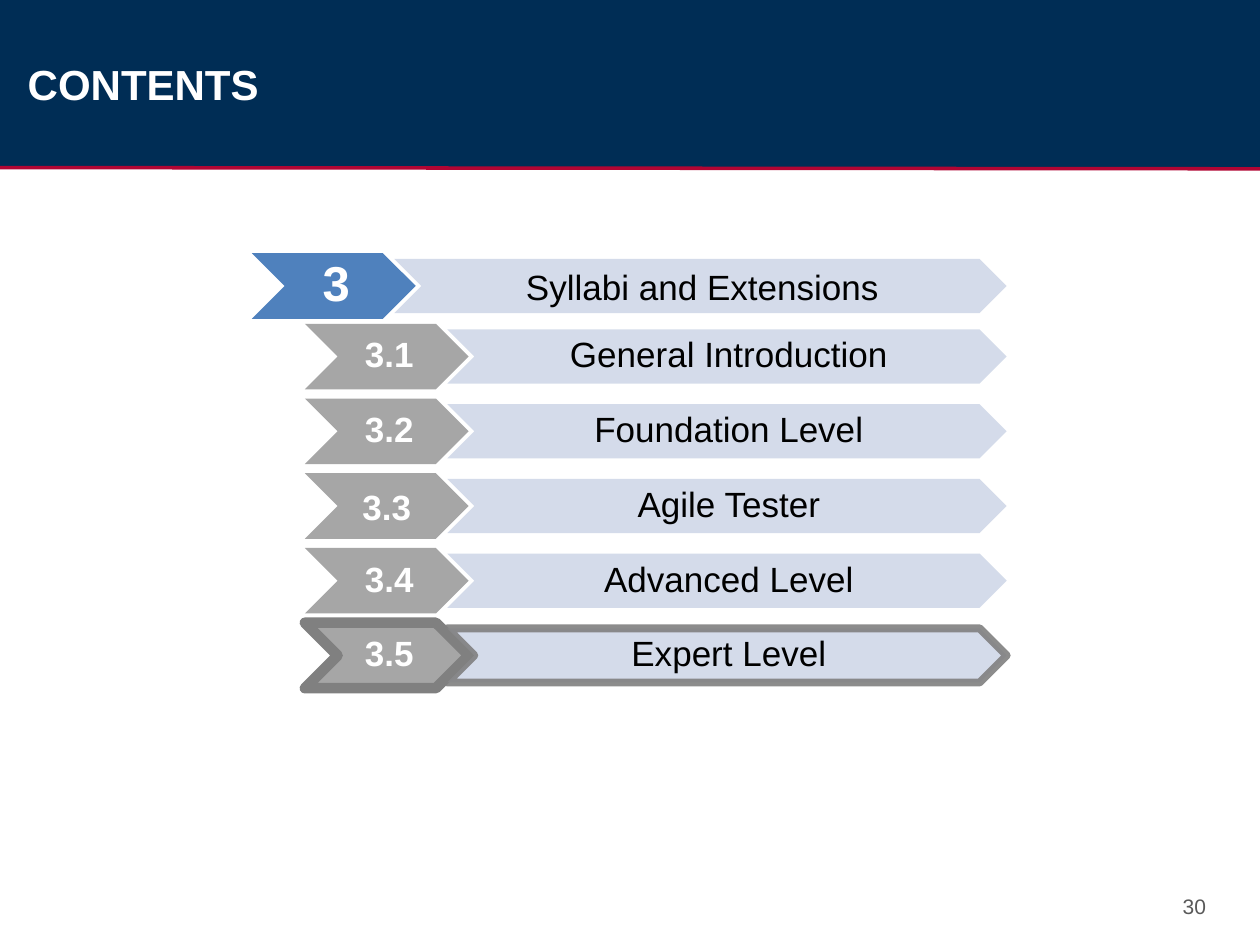
from lxml import etree
from pptx import Presentation
from pptx.dml.color import RGBColor
from pptx.enum.shapes import MSO_CONNECTOR, MSO_SHAPE
from pptx.enum.text import MSO_ANCHOR, MSO_AUTO_SIZE, PP_ALIGN
from pptx.oxml.ns import qn
from pptx.util import Inches, Pt

NAVY = RGBColor(0x00, 0x2D, 0x55)
RED = RGBColor(0xB1, 0x05, 0x33)
BLUE = RGBColor(0x4F, 0x81, 0xBD)
GREY = RGBColor(0xA6, 0xA6, 0xA6)
DARK_GREY = RGBColor(0x80, 0x80, 0x80)
TEXT_GREY = RGBColor(0x59, 0x59, 0x59)
PALE_BLUE = RGBColor(0xD0, 0xD8, 0xE8)
WHITE = RGBColor(0xFF, 0xFF, 0xFF)
BLACK = RGBColor(0x00, 0x00, 0x00)

COLUMNS, ROWS = 100, 75
CHEVRON_HEIGHT, BAR_HEIGHT = 5.2, 4.3
CHEVRON_WIDTH, BAR_OFFSET, BAR_RIGHT = 13, 11.3, 79.9
CHEVRON_INSETS = (0.04, 0.02, 0, 0.02)
BAR_INSETS = (0.03, 0.01, 0, 0.01)
DEFAULT_INSETS = (0.1, 0.05, 0.1, 0.05)
FIRST_TOPIC, TOPIC_STEP = 28.3, 5.93
TOPICS = ["General Introduction", "Foundation Level", "Agile Tester",
          "Advanced Level", "Expert Level"]


def set_all(target, values):
    for name, value in values.items():
        setattr(target, name, value)


def set_alpha(shape, percent):
    """Make the fill and outline partly transparent."""
    for color in shape.element.spPr.iter(qn("a:srgbClr")):
        etree.SubElement(color, qn("a:alpha"), val=str(percent * 1000))


class ContentsSlide:
    font_name = "Arial"

    def __init__(self, deck):
        self.column = deck.slide_width / COLUMNS
        self.row = deck.slide_height / ROWS
        self.slide = deck.slides.add_slide(deck.slide_layouts[5])
        self.shapes = self.slide.shapes

    def place(self, left, top, width, height):
        return [round(left * self.column), round(top * self.row),
                round(width * self.column), round(height * self.row)]

    def label(self, box, text, size, color, bold=False, align=PP_ALIGN.CENTER,
              insets=DEFAULT_INSETS, spacing=1.0, anchor=MSO_ANCHOR.MIDDLE):
        left, top, right, bottom = map(Inches, insets)
        frame = box.text_frame
        frame.text = text
        set_all(frame, dict(margin_left=left, margin_top=top, margin_right=right,
                            margin_bottom=bottom, word_wrap=True,
                            vertical_anchor=anchor, auto_size=MSO_AUTO_SIZE.NONE))
        para = frame.paragraphs[0]
        set_all(para, dict(alignment=align, line_spacing=spacing))
        span = para.runs[0]
        set_all(span.font, dict(name=self.font_name, size=Pt(size), bold=bold))
        span.font.color.rgb = color

    def shape(self, kind, area, color, alpha=None, outline=None):
        shape = self.shapes.add_shape(kind, *self.place(*area))
        shape.shadow.inherit = False
        shape.fill.solid()
        shape.fill.fore_color.rgb = color
        if outline:
            shape.line.width = Pt(outline)
            shape.line.color.rgb = DARK_GREY
        else:
            shape.line.fill.background()
        if alpha:
            set_alpha(shape, alpha)
        return shape

    def rule(self, left, top, right, bottom, color, width):
        line = self.shapes.add_connector(MSO_CONNECTOR.STRAIGHT,
                                         *self.place(left, top, right, bottom))
        line.line.color.rgb = color
        line.line.width = Pt(width)
        etree.SubElement(line.element.spPr, qn("a:effectLst"))

    def title(self, text, area):
        title = self.shapes.title
        set_all(title, dict(zip(("left", "top", "width", "height"), self.place(*area))))
        self.label(title, text, 24, WHITE, True, PP_ALIGN.LEFT)
        # The title comes first in the tree, so lift it above the band.
        title.element.getparent().append(title.element)

    def page_number(self, text, area):
        box = self.shapes.add_textbox(*self.place(*area))
        self.label(box, text, 12, TEXT_GREY, align=PP_ALIGN.RIGHT,
                   insets=(0.1, 0.05, 0.1, 0), anchor=MSO_ANCHOR.TOP)

    def entry(self, number, topic, left, middle, color, size=20, outlines=(None, None),
              number_format=None, topic_spacing=0.9):
        """Draw a numbered chevron and its topic bar, centred on one height."""
        chevron = self.shape(MSO_SHAPE.CHEVRON, (left, middle - CHEVRON_HEIGHT / 2,
                                                 CHEVRON_WIDTH, CHEVRON_HEIGHT),
                             color, outline=outlines[0])
        number_format = number_format or dict(insets=CHEVRON_INSETS, spacing=0.9)
        self.label(chevron, number, size, WHITE, True, **number_format)
        start = left + BAR_OFFSET
        bar = self.shape(MSO_SHAPE.CHEVRON, (start, middle - BAR_HEIGHT / 2,
                                             BAR_RIGHT - start, BAR_HEIGHT),
                         PALE_BLUE, alpha=90, outline=outlines[1])
        self.label(bar, topic, 20, BLACK, insets=BAR_INSETS, spacing=topic_spacing)


def main():
    deck = Presentation()
    deck.slide_width, deck.slide_height = Inches(10), Inches(7.5)
    page = ContentsSlide(deck)
    page.shape(MSO_SHAPE.RECTANGLE, (0, 0, COLUMNS, 13.3), NAVY)
    page.rule(0, 13.3, COLUMNS, 13.4, RED, 2)
    page.page_number("30", (85.8, 70.4, 10.9, 2.5))
    page.title("CONTENTS", (1.2, 0.4, 90, 12.5))

    page.entry("3", "Syllabi and Extensions", 20, 22.7, BLUE, size=28, topic_spacing=1.0)
    for index, topic in enumerate(TOPICS):
        current = topic == "Expert Level"
        plain = topic == "Agile Tester"
        page.entry(f"3.{index + 1}", topic, 24.2, FIRST_TOPIC + index * TOPIC_STEP, GREY,
                   outlines=(6, 4.5) if current else (None, None),
                   number_format=dict(insets=DEFAULT_INSETS) if plain else None)
    deck.save("out.pptx")


if __name__ == "__main__":
    main()
